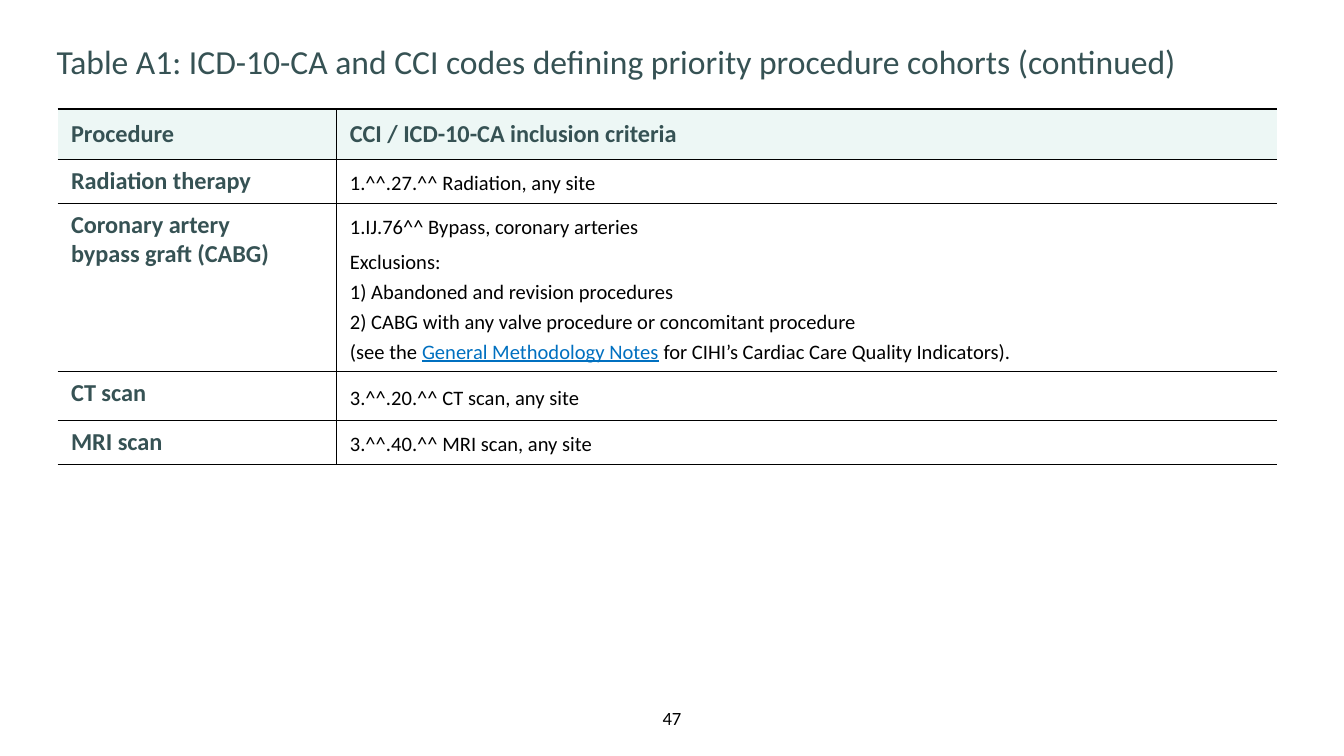
from copy import deepcopy

from lxml.etree import SubElement
from pptx import Presentation
from pptx.dml.color import RGBColor
from pptx.enum.text import MSO_ANCHOR as Anchor, PP_ALIGN as Align
from pptx.oxml.ns import qn
from pptx.util import Cm, Pt

# Content: each cell is a list of paragraphs, each paragraph a list of runs
TITLE = "Table A1: ICD-10-CA and CCI codes defining priority procedure cohorts (continued)"
PAGE_NUMBER = "47"
HEADER = ("Procedure", "CCI / ICD-10-CA inclusion criteria")
LINK = "General Methodology Notes"
PROCEDURES = [
    ("Radiation therapy", [["1.^^.27.^^ Radiation, any site"]]),
    ("Coronary artery \nbypass graft (CABG)", [
        ["1.IJ.76^^ Bypass, coronary arteries"],
        ["Exclusions:\n1) Abandoned and revision procedures\n"
         "2) CABG with any valve procedure or concomitant procedure \n(see the ",
         LINK, " for CIHI’s Cardiac Care Quality Indicators)."],
    ]),
    ("CT scan", [["3.^^.20.^^ CT scan, any site"]]),
    ("MRI scan", [["3.^^.40.^^ MRI scan, any site"]]),
]
MIDDLE_ROWS = (0, 3)

# Layout and colours
COLUMN_WIDTHS = (5.27, 17.77)
ROW_HEIGHTS = (0.95, 0.83, 3.18, 0.92, 0.84)
TEAL, BLACK, BLUE = "365254", "000000", "0070C0"
HEADER_FILL, WHITE = "EDF7F5", "FFFFFF"


def color(value):
    return RGBColor.from_string(value)


def write(frame, paragraphs, size=11, fill=BLACK, bold=False, align=Align.LEFT,
          line=None, gap=0):
    for index, runs in enumerate(paragraphs):
        paragraph = frame.paragraphs[0] if index == 0 else frame.add_paragraph()
        paragraph.alignment = align
        if line:
            paragraph.line_spacing = Pt(line)
        if index:
            paragraph.space_before = Pt(gap)
        for text in runs:
            for number, part in enumerate(text.split("\n")):
                if number:
                    paragraph.add_line_break()
                    line_break = paragraph._p[-1]
                    line_break.append(deepcopy(run.font._element))
                run = paragraph.add_run()
                run.text = part
                font = run.font
                font.name, font.size, font.bold = "Calibri", Pt(size), bold
                font.color.rgb = color(BLUE if text == LINK else fill)
                if text == LINK:
                    font.underline = True


def add_text(slide, text, left, top, width, height, anchor=Anchor.TOP, **text_format):
    frame = slide.shapes.add_textbox(Cm(left), Cm(top), Cm(width), Cm(height)).text_frame
    frame.word_wrap = True
    frame.vertical_anchor = anchor
    frame.margin_left = frame.margin_right = frame.margin_top = frame.margin_bottom = 0
    write(frame, [[text]], **text_format)


def set_borders(cell, **widths):
    """Draw the given sides (L, R, T, B) in black; a width of 0 hides the side."""
    properties = cell._tc.get_or_add_tcPr()
    for position, (side, width) in enumerate(widths.items()):
        border = SubElement(properties, qn(f"a:ln{side}"), w=str(Pt(width)))
        if width:
            SubElement(SubElement(border, qn("a:solidFill")), qn("a:srgbClr"), val=BLACK)
        else:
            SubElement(border, qn("a:noFill"))
        properties.insert(position, border)


presentation = Presentation()
presentation.slide_width, presentation.slide_height = Cm(25.4), Cm(14.28)
slide = presentation.slides.add_slide(presentation.slide_layouts[6])

# Title and page number
add_text(slide, TITLE, 1.07, 0.38, 22.86, 1.12, size=18, fill=TEAL, line=33)
add_text(slide, PAGE_NUMBER, 11.9, 13.34, 1.6, 0.43, anchor=Anchor.MIDDLE,
         size=10, align=Align.CENTER)

# Table grid
rows = [HEADER] + PROCEDURES
table = slide.shapes.add_table(
    len(rows), len(HEADER), Cm(1.09), Cm(2.06),
    Cm(sum(COLUMN_WIDTHS)), Cm(sum(ROW_HEIGHTS))).table
for column, width in zip(table.columns, COLUMN_WIDTHS):
    column.width = Cm(width)
for row, height in zip(table.rows, ROW_HEIGHTS):
    row.height = Cm(height)

# Table cells
for row, contents in enumerate(rows):
    for column, content in enumerate(contents):
        cell = table.cell(row, column)
        cell.fill.solid()
        cell.fill.fore_color.rgb = color(HEADER_FILL if row == 0 else WHITE)
        set_borders(cell, L=0.5 if column else 0, R=0 if column else 0.5,
                    T=0.5 if row else 1, B=0.5)
        if row in MIDDLE_ROWS and (row == 0 or column == 1):
            cell.vertical_anchor = Anchor.MIDDLE
        if row == 0 or column == 0:
            write(cell.text_frame, [[content]], size=13, fill=TEAL, bold=True)
        else:
            write(cell.text_frame, content, line=16, gap=3)

presentation.save("out.pptx")
